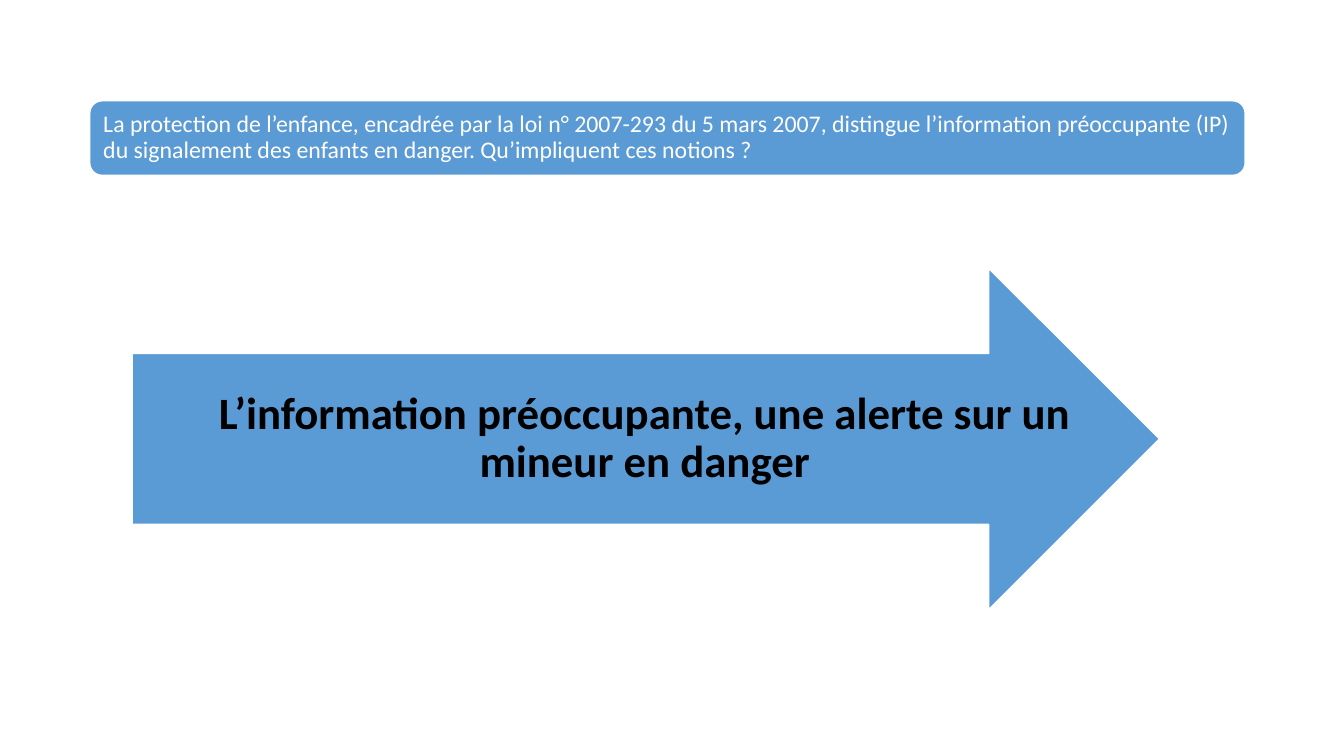
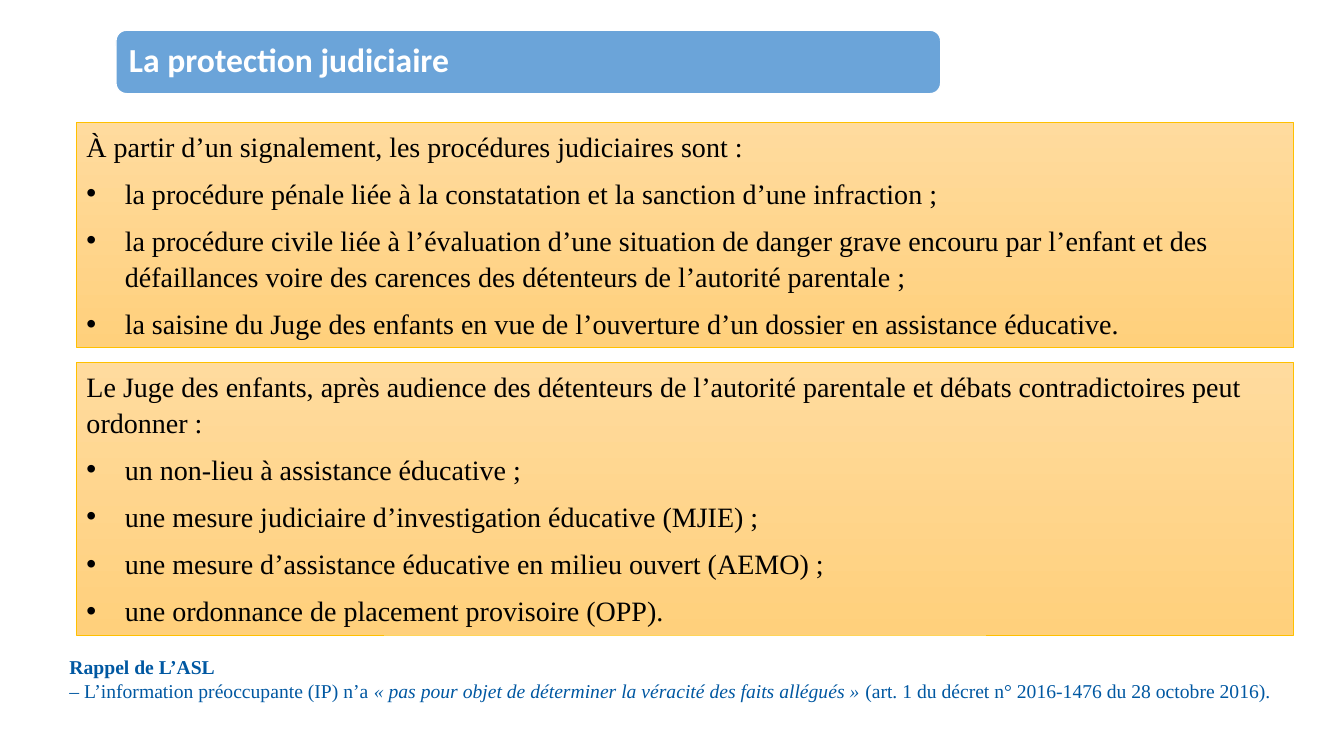
from dataclasses import dataclass

from lxml.etree import SubElement
from pptx import Presentation
from pptx.dml.color import RGBColor as RGB
from pptx.enum.shapes import MSO_SHAPE as SHAPE
from pptx.enum.text import MSO_ANCHOR as ANCHOR, PP_ALIGN as ALIGN
from pptx.oxml.ns import qn
from pptx.util import Inches, Pt


@dataclass(frozen=True)
class Theme:
    blue: RGB = RGB.from_string("5B9BD5")
    navy: RGB = RGB.from_string("0058A2")
    white: RGB = RGB.from_string("FFFFFF")
    black: RGB = RGB.from_string("000000")
    gold: RGB = RGB.from_string("FFC000")
    sand_top: RGB = RGB.from_string("FFDB9E")
    sand_bottom: RGB = RGB.from_string("FFD07C")
    sans: str = "Calibri"
    serif: str = "Times New Roman"
    question: int = 17
    arrow: int = 32
    heading: int = 24
    body: int = 20
    reminder: int = 14


theme = Theme()


def add_block(slide, preset, box, insets, line_color, line_width, anchor=ANCHOR.MIDDLE):
    block = slide.shapes.add_shape(preset, *map(Inches, box))
    block.shadow.inherit = False
    block.fill.solid()
    block.fill.fore_color.rgb = theme.blue
    block.line.color.rgb = line_color
    block.line.width = Pt(line_width)
    frame = block.text_frame
    frame.word_wrap = True
    frame.vertical_anchor = anchor
    left, top, right, bottom = map(Inches, insets)
    frame.margin_left, frame.margin_top = left, top
    frame.margin_right, frame.margin_bottom = right, bottom
    frame.paragraphs[0].alignment = ALIGN.LEFT
    return block


def add_run(paragraph, text, font, size, color, bold=False, italic=False):
    run = paragraph.add_run()
    run.text = text
    run.font.name = font
    run.font.size = Pt(size)
    run.font.color.rgb = color
    run.font.bold = bold
    run.font.italic = italic


deck = Presentation()
deck.slide_width, deck.slide_height = Inches(13.33), Inches(7.5)
blank = deck.slide_layouts[6]

alert_slide = deck.slides.add_slide(blank)
judicial_slide = deck.slides.add_slide(blank)

banners = [
    (alert_slide, SHAPE.ROUNDED_RECTANGLE, (0.89, 1, 11.46, 0.74), (0.1, 0.1, 0.1, 0.1),
     "La protection de l’enfance, encadrée par la loi n° 2007-293 du 5 mars 2007, distingue "
     "l’information préoccupante (IP) du signalement des enfants en danger. "
     "Qu’impliquent ces notions ?",
     theme.question, theme.white, False, ALIGN.LEFT, 100),
    (alert_slide, SHAPE.RIGHT_ARROW, (1.31, 2.66, 10.19, 3.39), (0.83, 0.36, 0, 0.36),
     "L’information préoccupante, une alerte sur un mineur en danger",
     theme.arrow, theme.black, True, ALIGN.CENTER, 100),
    (judicial_slide, SHAPE.ROUNDED_RECTANGLE, (1.15, 0.3, 8.18, 0.63), (0.1, 0.1, 0.1, 0.1),
     "La protection judiciaire",
     theme.heading, theme.white, True, ALIGN.LEFT, 90),
]
for slide, preset, box, insets, text, size, color, bold, alignment, opacity in banners:
    banner = add_block(slide, preset, box, insets, theme.white, 1)
    sentence = banner.text_frame.paragraphs[0]
    sentence.alignment = alignment
    sentence.line_spacing = 0.9
    add_run(sentence, text, theme.sans, size, color, bold)
    if opacity < 100:
        tint = banner.fill._xPr.find(qn("a:solidFill"))[0]
        SubElement(tint, qn("a:alpha"), val=str(opacity * 1000))

procedures = [
    (1.21, 2.24, "À partir d’un signalement, les procédures judiciaires sont :", [
        "la procédure pénale liée à la constatation et la sanction d’une infraction ;",
        "la procédure civile liée à l’évaluation d’une situation de danger grave encouru par "
        "l’enfant et des défaillances voire des carences des détenteurs de l’autorité parentale ;",
        "la saisine du Juge des enfants en vue de l’ouverture d’un dossier en assistance "
        "éducative.",
    ]),
    (3.59, 2.71,
     "Le Juge des enfants, après audience des détenteurs de l’autorité parentale et débats "
     "contradictoires peut ordonner :", [
         "un non-lieu à assistance éducative ;",
         "une mesure judiciaire d’investigation éducative (MJIE) ;",
         "une mesure d’assistance éducative en milieu ouvert (AEMO) ;",
         "une ordonnance de placement provisoire (OPP).",
     ]),
]
for top, height, introduction, items in procedures:
    panel = add_block(judicial_slide, SHAPE.RECTANGLE, (0.76, top, 12.07, height),
                      (0.1, 0.05, 0.1, 0.05), theme.gold, 0.5, ANCHOR.TOP)
    panel.fill.gradient()
    panel.fill.gradient_angle = 270
    for stop, shade in zip(panel.fill.gradient_stops, (theme.sand_top, theme.sand_bottom)):
        stop.color.rgb = shade
    frame = panel.text_frame
    for index, text in enumerate([introduction, *items]):
        entry = frame.add_paragraph() if index else frame.paragraphs[0]
        entry.alignment = ALIGN.LEFT
        entry.line_spacing = 1.07
        entry.space_after = Pt(8)
        add_run(entry, text, theme.serif, theme.body, theme.black)
        if index:
            layout = entry._p.get_or_add_pPr()
            layout.set("marL", str(Inches(0.38)))
            layout.set("indent", str(-Inches(0.38)))
            SubElement(layout, qn("a:buFont"), typeface="Arial")
            SubElement(layout, qn("a:buChar"), char="•")

reminder = judicial_slide.shapes.add_textbox(*map(Inches, (0.59, 6.45, 12.41, 0.81))).text_frame
reminder.word_wrap = True
reminder_lines = [
    [("Rappel de L’ASL", True, False)],
    [("– L’information préoccupante (IP) n’a ", False, False),
     ("« pas pour objet de déterminer la véracité des faits allégués »", False, True),
     (" (art. 1 du décret n° 2016-1476 du 28 octobre 2016).", False, False)],
]
for index, pieces in enumerate(reminder_lines):
    line = reminder.add_paragraph() if index else reminder.paragraphs[0]
    for text, bold, italic in pieces:
        add_run(line, text, theme.serif, theme.reminder, theme.navy, bold, italic)

deck.save("out.pptx")
